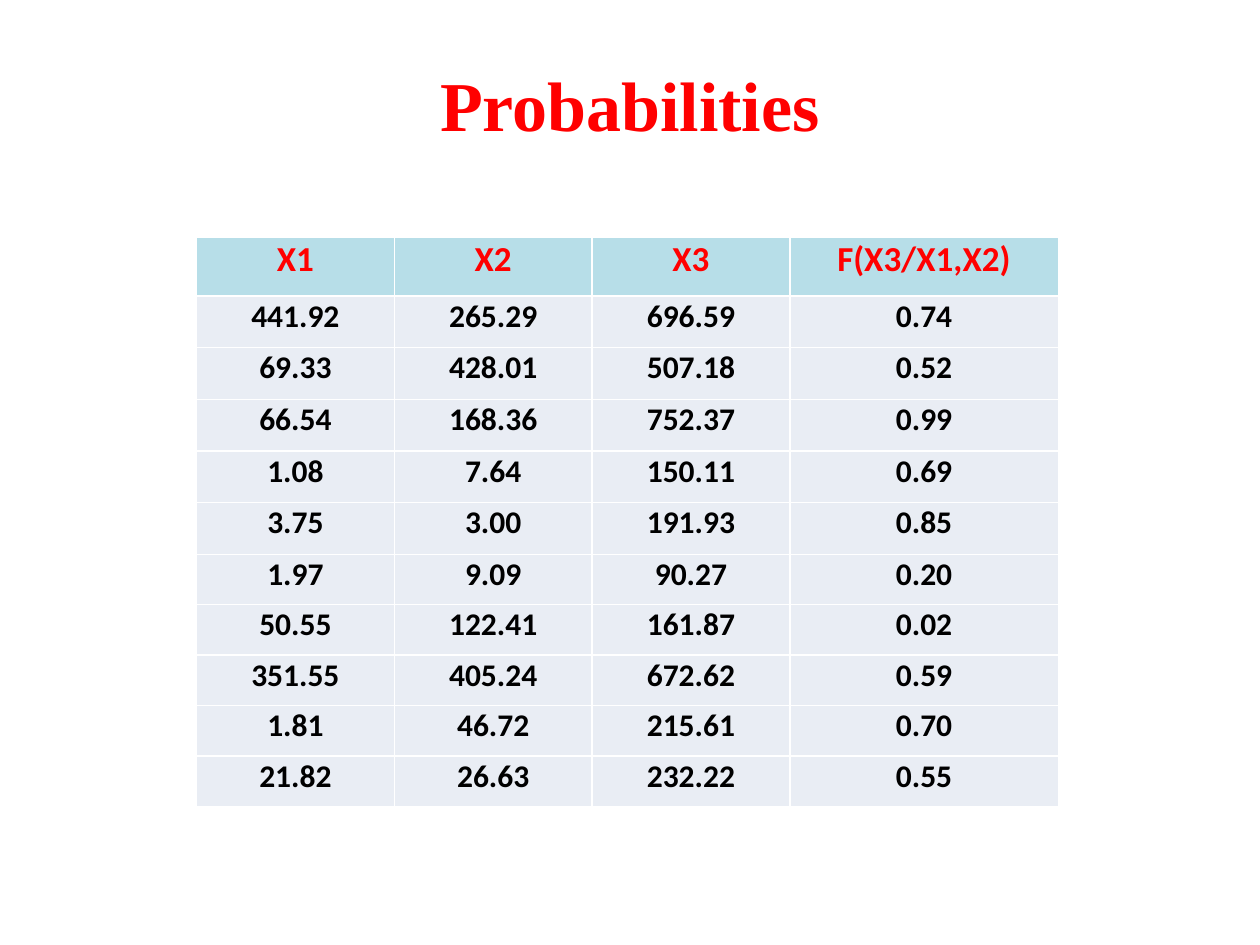
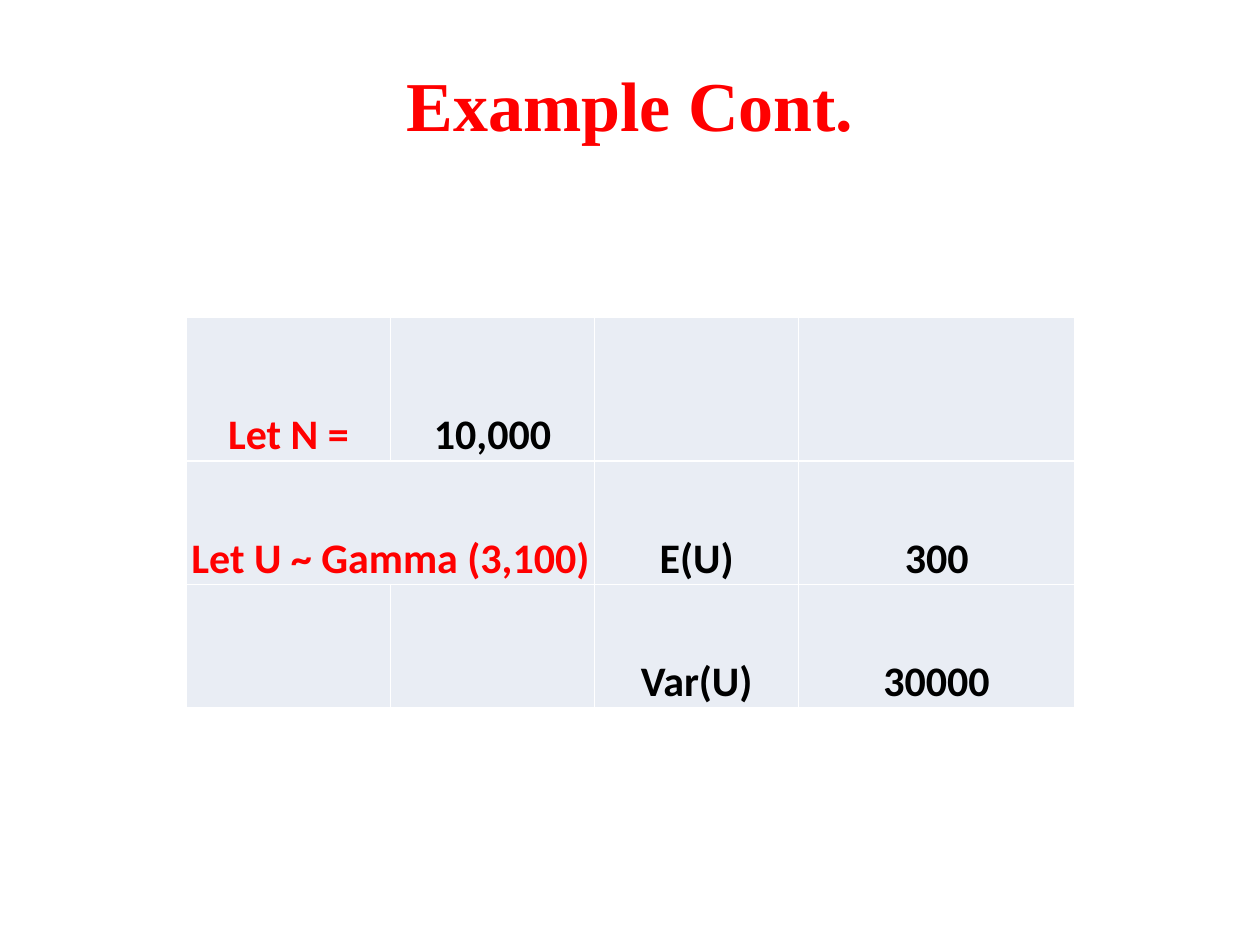
from pptx import Presentation
from pptx import util as u
from pptx.dml.color import RGBColor
from pptx.enum import text as t
from pptx.oxml import parse_xml
from pptx.oxml.ns import nsdecls

RED, BLACK, WHITE = "FF0000", "000000", "FFFFFF"
HEAD, BODY = "B7DEE8", "E9EDF4"
TOP, MID, LOW = t.MSO_ANCHOR.TOP, t.MSO_ANCHOR.MIDDLE, t.MSO_ANCHOR.BOTTOM

PROBS = [
    ("X1", "X2", "X3", "F(X3/X1,X2)"),
    ("441.92", "265.29", "696.59", "0.74"),
    ("69.33", "428.01", "507.18", "0.52"),
    ("66.54", "168.36", "752.37", "0.99"),
    ("1.08", "7.64", "150.11", "0.69"),
    ("3.75", "3.00", "191.93", "0.85"),
    ("1.97", "9.09", "90.27", "0.20"),
    ("50.55", "122.41", "161.87", "0.02"),
    ("351.55", "405.24", "672.62", "0.59"),
    ("1.81", "46.72", "215.61", "0.70"),
    ("21.82", "26.63", "232.22", "0.55"),
]
GAMMA = [
    ("Let N =", "10,000", "", ""),
    ("Let U ~ Gamma (3,100)", "", "E(U)", "300"),
    ("", "", "Var(U)", "30000"),
]
SLIDES = [
    dict(title="Probabilities", rows=PROBS, left=1.56, top=1.88,
         wide=[1.57] * 3 + [2.13], high=[0.47] + [0.41] * 5 + [0.4] * 5,
         size=18, anchor=TOP, head=True),
    dict(title="Example Cont.", rows=GAMMA, left=1.48, top=2.52,
         wide=[1.62] * 3 + [2.19], high=[1.14, 0.98, 0.98],
         size=24, anchor=LOW, merge=((1, 0), (1, 1))),
]


def color(code):
    """Turn a hex string into a colour."""
    return RGBColor.from_string(code)


def put(frame, words, size=18, font="Calibri", ink=BLACK):
    """Write one bold, centred paragraph."""
    para = frame.paragraphs[0]
    para.alignment = t.PP_ALIGN.CENTER
    run = para.add_run()
    run.text = words
    run.font.size, run.font.name, run.font.bold = u.Pt(size), font, True
    run.font.color.rgb = color(ink)


def paint(cell, fill, anchor):
    """Give a cell its borders, fill, margins and anchor."""
    props = cell._tc.get_or_add_tcPr()
    for side in "LRTB":
        props.append(parse_xml(
            f'<a:ln{side} {nsdecls("a")} w="{u.Pt(1)}"><a:solidFill>'
            f'<a:srgbClr val="{WHITE}"/></a:solidFill></a:ln{side}>'))
    cell.fill.solid()
    cell.fill.fore_color.rgb = color(fill)
    cell.margin_left = cell.margin_right = cell.margin_top = u.Inches(0.01)
    cell.margin_bottom = 0
    cell.vertical_anchor = anchor


def grid(slide, rows, left, top, wide, high, size, anchor, head=False, merge=None):
    """Add a table whose labels are red."""
    box = [u.Inches(x) for x in (left, top, sum(wide), sum(high))]
    table = slide.shapes.add_table(len(rows), len(wide), *box).table
    table.first_row = table.horz_banding = False
    for col, x in zip(table.columns, wide):
        col.width = u.Inches(x)
    for row, y in zip(table.rows, high):
        row.height = u.Inches(y)
    for i, row in enumerate(rows):
        top_row = head and i == 0
        for j, words in enumerate(row):
            cell = table.cell(i, j)
            paint(cell, HEAD if top_row else BODY, anchor)
            if words:
                label = top_row or (not head and j == 0)
                put(cell.text_frame, words, size=20 if top_row else size,
                    ink=RED if label else BLACK)
    if merge:
        start, end = merge
        table.cell(*start).merge(table.cell(*end))


def page(deck, title, **parts):
    """Add a slide with a title and a table."""
    slide = deck.slides.add_slide(deck.slide_layouts[5])
    name = slide.shapes.title
    name.left, name.top, name.width, name.height = (
        u.Inches(x) for x in (0.5, 0.3, 9, 1.04))
    name.text_frame.vertical_anchor = MID
    put(name.text_frame, title, size=40, font="Times New Roman", ink=RED)
    grid(slide, **parts)


def main():
    """Build and save the deck."""
    deck = Presentation()
    deck.slide_width, deck.slide_height = u.Inches(10), u.Inches(7.5)
    for parts in SLIDES:
        page(deck, **parts)
    deck.save("out.pptx")


if __name__ == "__main__":
    main()
